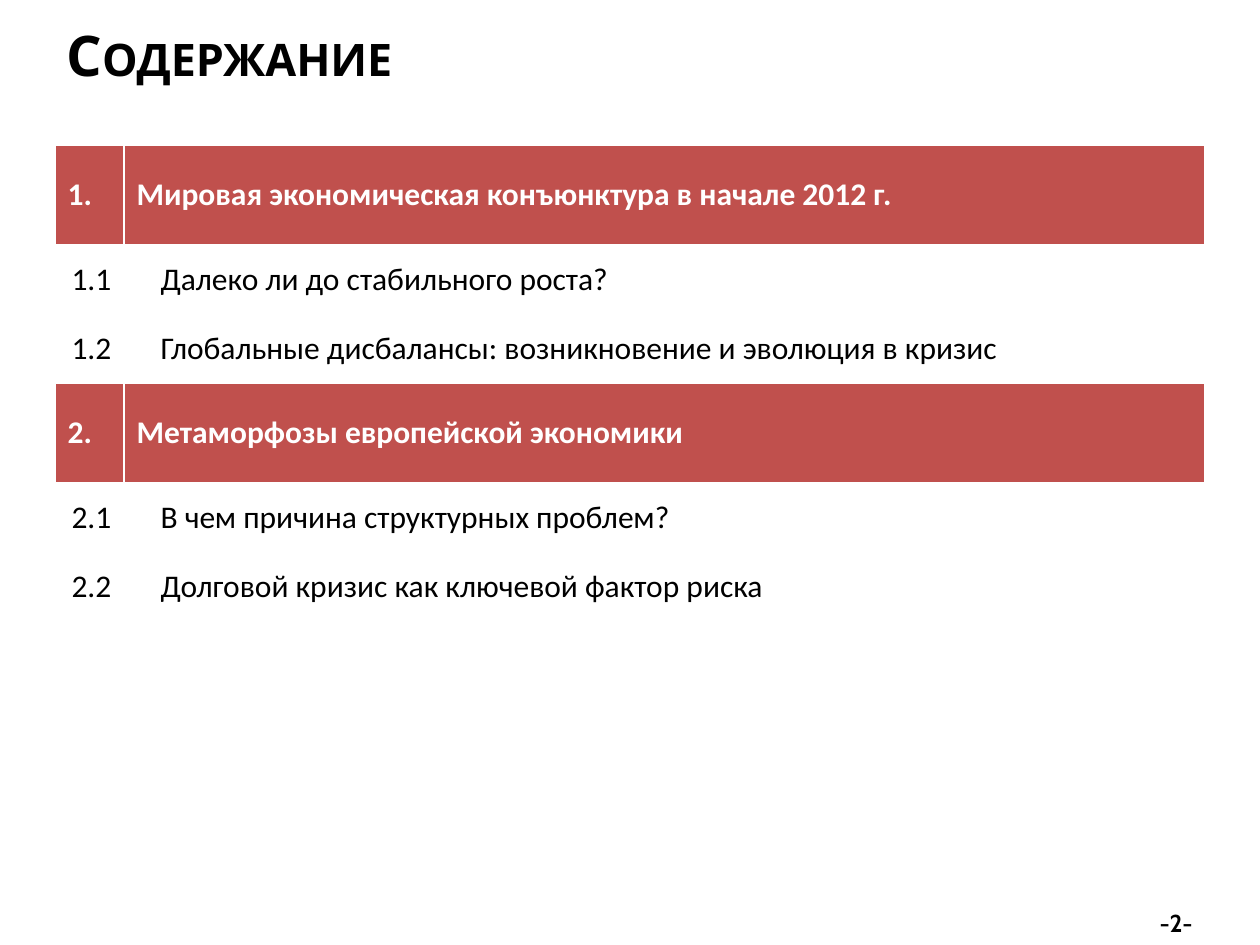
"""Build the contents slide with its two-part table."""
from lxml.etree import fromstring
from pptx import Presentation
from pptx.dml.color import RGBColor
from pptx.enum.text import MSO_ANCHOR, PP_ALIGN
from pptx.oxml.ns import nsdecls
from pptx.util import Pt

TITLE = "Содержание"
PAGE = "-2-"
PARTS = [
    ("Мировая экономическая конъюнктура в начале 2012 г.", [
        "Далеко ли до стабильного роста?",
        "Глобальные дисбалансы: возникновение и эволюция в кризис",
    ]),
    ("Метаморфозы европейской экономики", [
        "В чем причина структурных проблем?",
        "Долговой кризис как ключевой фактор риска",
    ]),
]
RED = RGBColor(0xC0, 0x50, 0x4D)
WHITE = RGBColor(255, 255, 255)
BLACK = RGBColor(0, 0, 0)
COLS = (69, 1081)
HEAD, ITEM = 100, 69
INDENT = 24


def px(n):
    return round(n * 914400 / 126)


def style(para, size, face, color, bold):
    for run in para.runs:
        font = run.font
        font.size, font.name, font.bold = Pt(size), face, bold
        font.color.rgb = color


def add_text(slide, box, text, size, align, anchor):
    frame = slide.shapes.add_textbox(*map(px, box)).text_frame
    frame.word_wrap = True
    frame.vertical_anchor = anchor
    frame.text = text
    para = frame.paragraphs[0]
    para.alignment = align
    style(para, size, "Cabin", BLACK, True)
    return para.runs[0]


def add_edge(cell, side):
    line = fromstring(
        f'<a:{side} {nsdecls("a")} w="12700"><a:solidFill>'
        f'<a:srgbClr val="{WHITE}"/></a:solidFill></a:{side}>')
    cell._tc.get_or_add_tcPr().insert(0, line)


def fill_cell(cell, text, head, first):
    cell.text = text
    cell.vertical_anchor = MSO_ANCHOR.MIDDLE
    para = cell.text_frame.paragraphs[0]
    style(para, 18, "Calibri", WHITE if head else BLACK, head)
    if head:
        cell.fill.solid()
        cell.fill.fore_color.rgb = RED
        add_edge(cell, "lnR" if first else "lnL")
        return
    cell.fill.background()
    if first:
        para.alignment = PP_ALIGN.RIGHT
    else:
        props = para._p.get_or_add_pPr()
        props.set("marL", str(px(INDENT)))
        props.set("indent", "0")


def list_rows():
    rows = []
    for i, (name, items) in enumerate(PARTS, 1):
        rows.append((f"{i}.", name, True))
        rows += [(f"{i}.{j}", item, False) for j, item in enumerate(items, 1)]
    return rows


def add_list(slide, left, top):
    rows = list_rows()
    highs = [HEAD if head else ITEM for *_, head in rows]
    box = map(px, (left, top, sum(COLS), sum(highs)))
    table = slide.shapes.add_table(len(rows), len(COLS), *box).table
    table.first_row = table.horz_banding = False
    for col, wide in zip(table.columns, COLS):
        col.width = px(wide)
    for row, high, (mark, text, head) in zip(table.rows, highs, rows):
        row.height = px(high)
        fill_cell(row.cells[0], mark, head, True)
        fill_cell(row.cells[1], text, head, False)


def main():
    deck = Presentation()
    deck.slide_width, deck.slide_height = px(1260), px(945)
    slide = deck.slides.add_slide(deck.slide_layouts[6])
    title = add_text(slide, (54, 14, 1150, 81), TITLE, 32,
                     PP_ALIGN.LEFT, MSO_ANCHOR.TOP)
    title._r.get_or_add_rPr().set("cap", "small")
    add_list(slide, 55, 145)
    add_text(slide, (1136, 900, 69, 46), PAGE, 14,
             PP_ALIGN.RIGHT, MSO_ANCHOR.MIDDLE)
    deck.save("out.pptx")


if __name__ == "__main__":
    main()
